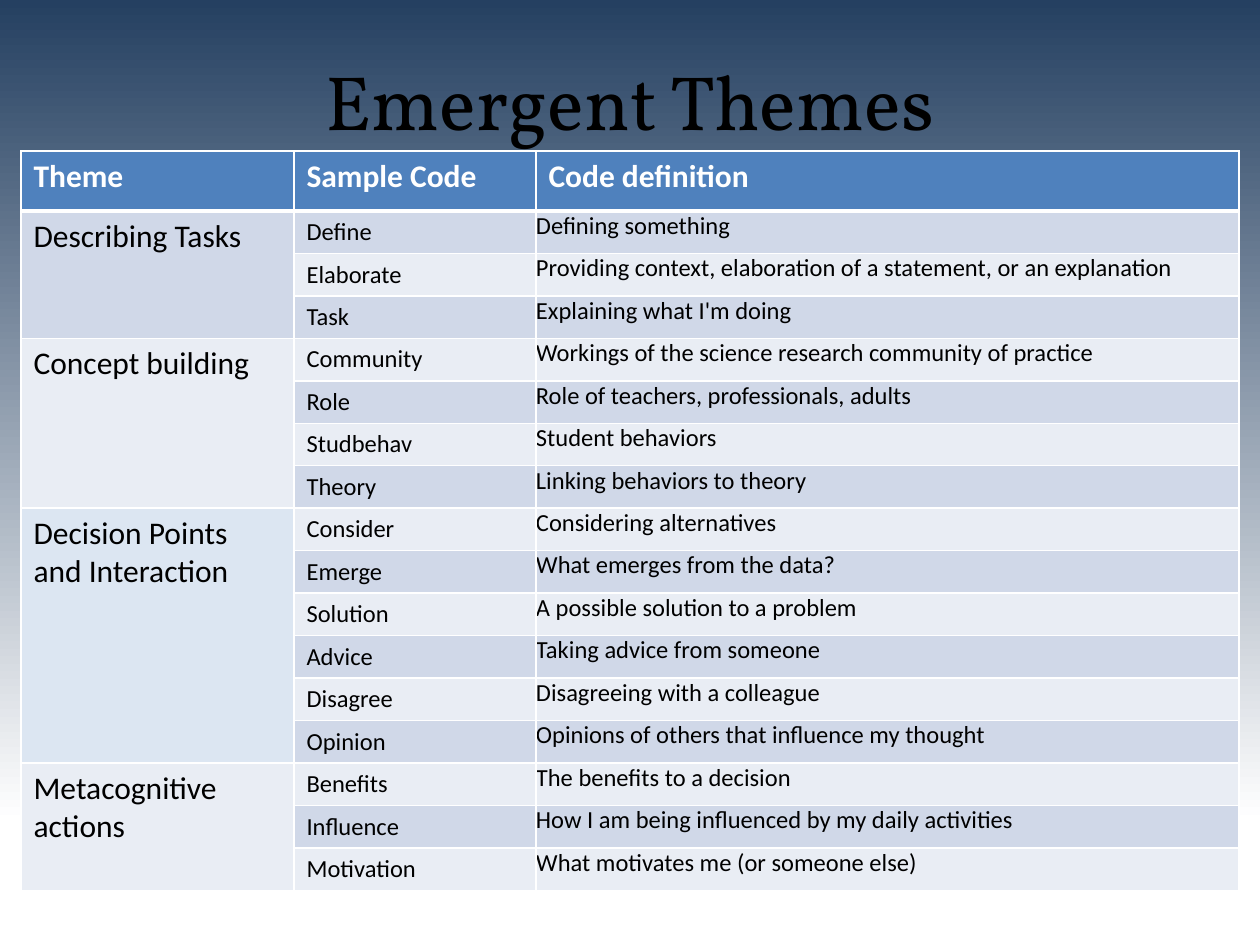
"""Build the Emergent Themes slide with its table of themes, codes and definitions."""
from dataclasses import dataclass

from lxml import etree
from pptx import Presentation
from pptx import util as u
from pptx.dml.color import RGBColor
from pptx.enum import text
from pptx.oxml import ns

TITLE = "Emergent Themes"
HEADERS = ("Theme", "Sample Code", "Code definition")
THEMES = [
    ("Describing Tasks", "D0D8E8", [
        ("Define", "Defining something"),
        ("Elaborate", "Providing context, elaboration of a statement, or an explanation"),
        ("Task", "Explaining what I'm doing"),
    ]),
    ("Concept building", "E9EDF4", [
        ("Community", "Workings of the science research community of practice"),
        ("Role", "Role of teachers, professionals, adults"),
        ("Studbehav", "Student behaviors"),
        ("Theory", "Linking behaviors to theory"),
    ]),
    ("Decision Points and Interaction", "DCE6F2", [
        ("Consider", "Considering alternatives"),
        ("Emerge", "What emerges from the data?"),
        ("Solution", "A possible solution to a problem"),
        ("Advice", "Taking advice from someone"),
        ("Disagree", "Disagreeing with a colleague"),
        ("Opinion", "Opinions of others that influence my thought"),
    ]),
    ("Metacognitive actions", "E9EDF4", [
        ("Benefits", "The benefits to a decision"),
        ("Influence", "How I am being influenced by my daily activities"),
        ("Motivation", "What motivates me (or someone else)"),
    ]),
]


@dataclass(frozen=True)
class Theme:
    title_font: str = "Vollkorn"
    body_font: str = "Calibri"
    title_size: int = 44
    theme_size: int = 18
    code_size: int = 14
    ink: str = "000000"
    white: str = "FFFFFF"
    navy: str = "254061"
    header: str = "4F81BD"
    bands: tuple = ("D0D8E8", "E9EDF4")
    line: int = 1
    header_line: int = 3


THEME = Theme()
SCALE = u.Inches(1) // 126
SLIDE_SIZE = (1260, 945)
TITLE_BOX = (63, 21, 1134, 158)
TABLE_ORIGIN = (21, 151)
COLUMN_WIDTHS = (273, 242, 703)
HEADER_HEIGHT, ROW_HEIGHT = 60, 42


def px(value):
    return u.Emu(value * SCALE)


def add_run(paragraph, words, font, size, color, bold=False):
    run = paragraph.add_run()
    run.text = words
    run.font.name, run.font.size, run.font.bold = font, u.Pt(size), bold
    run.font.color.rgb = RGBColor.from_string(color)


def style_cell(cell, fill, top, bottom):
    properties = cell._tc.get_or_add_tcPr()
    for side, width in (("L", THEME.line), ("R", THEME.line), ("T", top), ("B", bottom)):
        line = etree.SubElement(properties, ns.qn(f"a:ln{side}"), w=str(u.Pt(width)))
        solid = etree.SubElement(line, ns.qn("a:solidFill"))
        etree.SubElement(solid, ns.qn("a:srgbClr"), val=THEME.white)
    cell.fill.solid()
    cell.fill.fore_color.rgb = RGBColor.from_string(fill)


def write_cell(cell, words, size, color=THEME.ink, bold=False):
    add_run(cell.text_frame.paragraphs[0], words, THEME.body_font, size, color, bold)


def paint_background(slide):
    fill = slide.background.fill
    fill.gradient()
    fill.gradient_angle = 90
    for stop, position, color in zip(fill.gradient_stops, (0.13, 1), (THEME.white, THEME.navy)):
        stop.position = position
        stop.color.rgb = RGBColor.from_string(color)


def add_title(slide):
    title = slide.shapes.title
    title.left, title.top, title.width, title.height = map(px, TITLE_BOX)
    title.text_frame.vertical_anchor = text.MSO_ANCHOR.MIDDLE
    paragraph = title.text_frame.paragraphs[0]
    paragraph.alignment = text.PP_ALIGN.CENTER
    add_run(paragraph, TITLE, THEME.title_font, THEME.title_size, THEME.ink)


def add_theme_table(slide):
    code_count = sum(len(codes) for _, _, codes in THEMES)
    heights = [HEADER_HEIGHT] + [ROW_HEIGHT] * code_count
    box = (*TABLE_ORIGIN, sum(COLUMN_WIDTHS), sum(heights))
    table = slide.shapes.add_table(len(heights), len(HEADERS), *map(px, box)).table
    for column, width in zip(table.columns, COLUMN_WIDTHS):
        column.width = px(width)
    for row, height in zip(table.rows, heights):
        row.height = px(height)

    for cell, words in zip(table.rows[0].cells, HEADERS):
        style_cell(cell, THEME.header, THEME.line, THEME.header_line)
        write_cell(cell, words, THEME.theme_size, THEME.white, True)

    row = 1
    for name, fill, codes in THEMES:
        first = table.cell(row, 0)
        first.merge(table.cell(row + len(codes) - 1, 0))
        write_cell(first, name, THEME.theme_size)
        for code, definition in codes:
            band = THEME.bands[(row - 1) % 2]
            top = THEME.header_line if row == 1 else THEME.line
            for column, color in enumerate((fill, band, band)):
                style_cell(table.cell(row, column), color, top, THEME.line)
            write_cell(table.cell(row, 1), code, THEME.code_size)
            meaning = table.cell(row, 2)
            meaning.margin_left = meaning.margin_right = 0
            meaning.margin_top = meaning.margin_bottom = 0
            write_cell(meaning, definition, THEME.code_size)
            row += 1


def main():
    presentation = Presentation()
    presentation.slide_width, presentation.slide_height = map(px, SLIDE_SIZE)
    slide = presentation.slides.add_slide(presentation.slide_layouts[5])
    paint_background(slide)
    add_title(slide)
    add_theme_table(slide)
    presentation.save("out.pptx")


if __name__ == "__main__":
    main()
